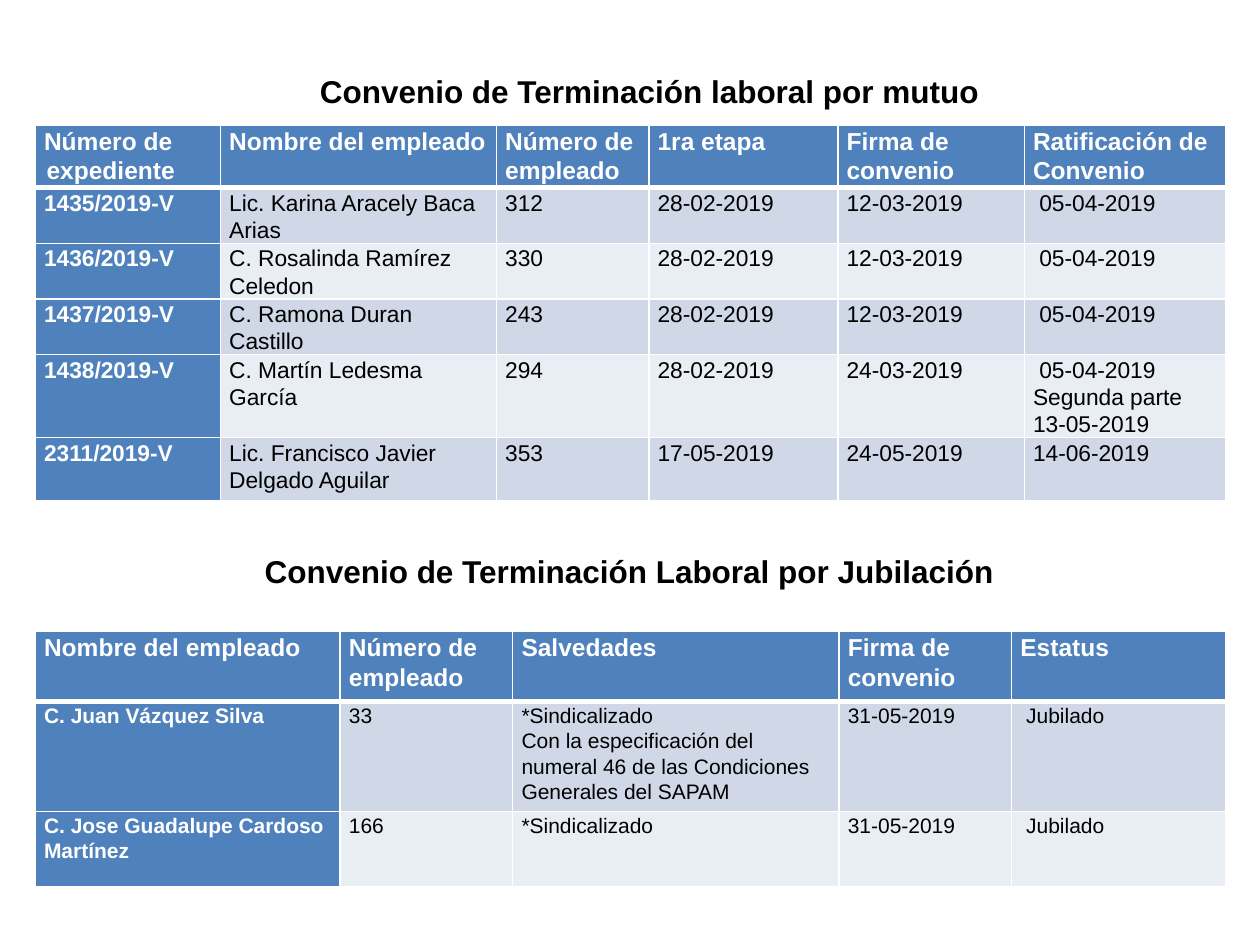
from dataclasses import dataclass

from lxml import etree
from pptx import Presentation
from pptx.dml.color import RGBColor
from pptx.enum.text import MSO_AUTO_SIZE, PP_ALIGN
from pptx.oxml.ns import qn
from pptx.util import Inches, Pt

CENTER = PP_ALIGN.CENTER
FIT_SHAPE = MSO_AUTO_SIZE.SHAPE_TO_FIT_TEXT


@dataclass(frozen=True)
class Theme:
    font: str = "Arial"
    accent: str = "4F81BD"
    bands: tuple[str, str] = ("D0D8E8", "E9EDF4")
    light: str = "FFFFFF"
    dark: str = "000000"
    title_size: int = 18
    header_size: int = 14
    line_spacing: float = 1.07
    thin_line: int = 1
    thick_line: int = 3


@dataclass(frozen=True)
class Title:
    text: str
    left: float
    top: float
    width: float


@dataclass(frozen=True)
class Agreement:
    title: Title
    top: float
    widths: tuple[float, ...]
    heights: tuple[float, ...]
    body_size: int
    first_indent: float
    rows: tuple[tuple[str, ...], ...]


THEME = Theme()
TABLE_LEFT = 0.28

AGREEMENTS = (
    Agreement(
        title=Title("Convenio de Terminación laboral por mutuo", 2.32, 0.52, 5.67),
        top=0.99,
        widths=(1.47, 2.19, 1.21, 1.5, 1.48, 1.6),
        heights=(0.5, 0.44, 0.44, 0.44, 0.66, 0.5),
        body_size=13,
        first_indent=0.02,
        rows=(
            ("Número de expediente", "Nombre del empleado", "Número de empleado",
             "1ra etapa", "Firma de convenio", "Ratificación de Convenio"),
            ("1435/2019-V", "Lic. Karina Aracely Baca Arias", "312",
             "28-02-2019", "12-03-2019", " 05-04-2019"),
            ("1436/2019-V", "C. Rosalinda Ramírez Celedon", "330",
             "28-02-2019", "12-03-2019", " 05-04-2019"),
            ("1437/2019-V", "C. Ramona Duran Castillo", "243",
             "28-02-2019", "12-03-2019", " 05-04-2019"),
            ("1438/2019-V", "C. Martín Ledesma García", "294",
             "28-02-2019", "24-03-2019", " 05-04-2019\nSegunda parte\n13-05-2019"),
            ("2311/2019-V", "Lic. Francisco Javier Delgado Aguilar", "353",
             "17-05-2019", "24-05-2019", "14-06-2019"),
        ),
    ),
    Agreement(
        title=Title("Convenio de Terminación Laboral por Jubilación", 1.61, 4.33, 6.77),
        top=5.01,
        widths=(2.42, 1.37, 2.59, 1.37, 1.7),
        heights=(0.56, 0.87, 0.6),
        body_size=12,
        first_indent=0,
        rows=(
            ("Nombre del empleado", "Número de empleado", "Salvedades",
             "Firma de convenio", "Estatus"),
            ("C. Juan Vázquez Silva", "33",
             "*Sindicalizado\nCon la especificación del numeral 46 de las "
             "Condiciones Generales del SAPAM",
             "31-05-2019", " Jubilado"),
            ("C. Jose Guadalupe Cardoso Martínez", "166", "*Sindicalizado",
             "31-05-2019", " Jubilado"),
        ),
    ),
)


def style_text(frame, size: int, color: str, bold: bool) -> None:
    for para in frame.paragraphs:
        for span in para.runs:
            span.font.name = THEME.font
            span.font.size = Pt(size)
            span.font.bold = bold
            span.font.color.rgb = RGBColor.from_string(color)


def add_title(page, title: Title) -> None:
    box = page.shapes.add_textbox(
        Inches(title.left), Inches(title.top), Inches(title.width), Inches(0.4))
    frame = box.text_frame
    frame.word_wrap = True
    frame.auto_size = FIT_SHAPE
    frame.text = title.text
    frame.paragraphs[0].alignment = CENTER
    style_text(frame, THEME.title_size, THEME.dark, True)


def set_borders(cell, row: int) -> None:
    properties = cell._tc.get_or_add_tcPr()
    thick_side = {0: "B", 1: "T"}.get(row)
    for side in "LRTB":
        points = THEME.thick_line if side == thick_side else THEME.thin_line
        line = etree.SubElement(properties, qn(f"a:ln{side}"), w=str(int(Pt(points))))
        fill = etree.SubElement(line, qn("a:solidFill"))
        etree.SubElement(fill, qn("a:srgbClr"), val=THEME.light)


def fill_cell(cell, text: str, row: int, column: int, agreement: Agreement) -> None:
    heading = row == 0 or column == 0
    set_borders(cell, row)
    cell.fill.solid()
    color = THEME.accent if heading else THEME.bands[(row - 1) % 2]
    cell.fill.fore_color.rgb = RGBColor.from_string(color)
    cell.margin_left = cell.margin_right = Inches(0.07)
    cell.margin_top = Inches(0.01)
    cell.margin_bottom = Inches(0)
    cell.text_frame.text = text
    for para in cell.text_frame.paragraphs:
        para.line_spacing = THEME.line_spacing
        if column == 0 and agreement.first_indent:
            indent = Inches(agreement.first_indent)
            settings = para._p.get_or_add_pPr()
            settings.set("marL", str(int(indent)))
            settings.set("indent", str(-int(indent)))
    size = THEME.header_size if row == 0 else agreement.body_size
    style_text(cell.text_frame, size, THEME.light if heading else THEME.dark, heading)


def add_agreement(page, agreement: Agreement) -> None:
    table = page.shapes.add_table(
        len(agreement.heights), len(agreement.widths),
        Inches(TABLE_LEFT), Inches(agreement.top),
        Inches(sum(agreement.widths)), Inches(sum(agreement.heights))).table
    for column, width in zip(table.columns, agreement.widths):
        column.width = Inches(width)
    for row, height in zip(table.rows, agreement.heights):
        row.height = Inches(height)
    for row, texts in enumerate(agreement.rows):
        for column, text in enumerate(texts):
            fill_cell(table.cell(row, column), text, row, column, agreement)
    add_title(page, agreement.title)


def main() -> None:
    deck = Presentation()
    deck.slide_width = Inches(10)
    deck.slide_height = Inches(7.5)
    page = deck.slides.add_slide(deck.slide_layouts[6])
    for agreement in AGREEMENTS:
        add_agreement(page, agreement)
    deck.save("out.pptx")


if __name__ == "__main__":
    main()
